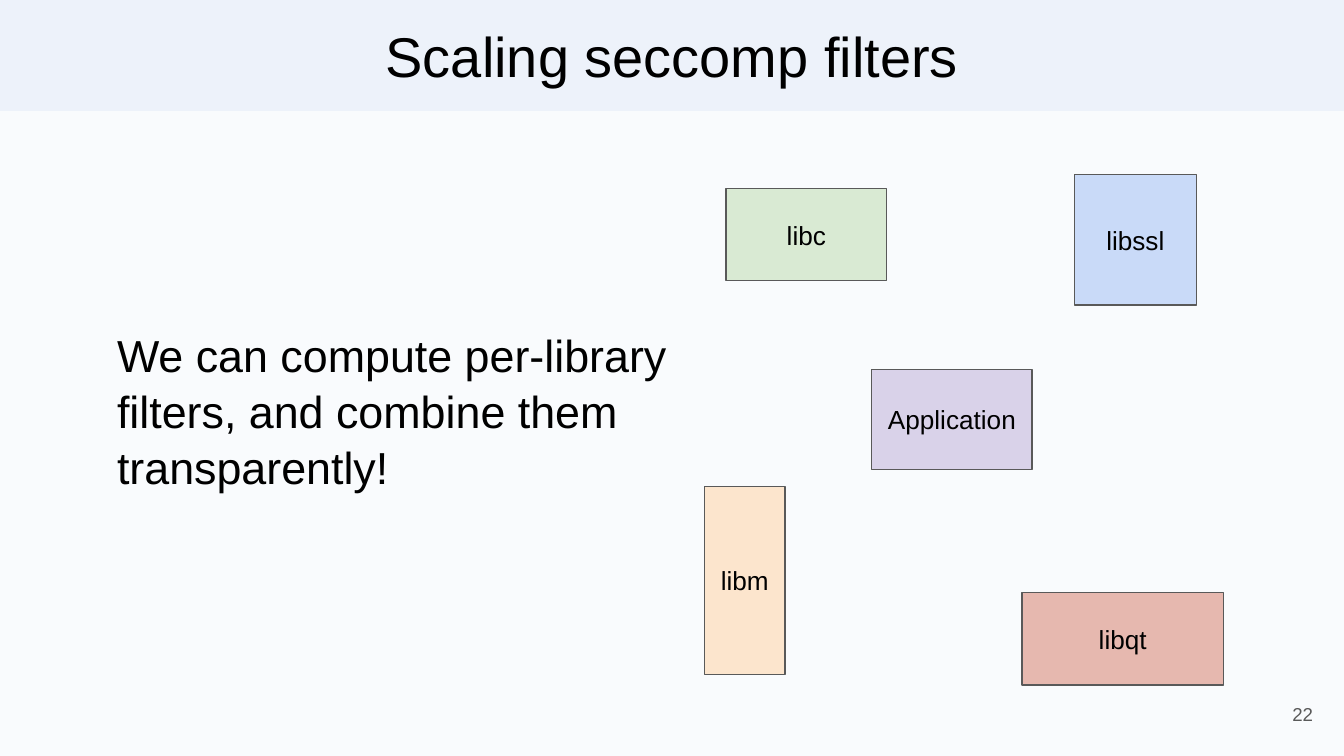
from pptx import Presentation
from pptx.dml.color import RGBColor
from pptx.enum.shapes import MSO_SHAPE as Shape
from pptx.enum.text import MSO_ANCHOR as Anchor, MSO_AUTO_SIZE as AutoSize, PP_ALIGN as Align
from pptx.oxml.ns import qn
from pptx.util import Pt

BACKGROUND = RGBColor(0xF9, 0xFB, 0xFD)
BANNER = RGBColor(0xED, 0xF2, 0xFA)
BLACK = RGBColor(0, 0, 0)
GRAY = RGBColor(0x59, 0x59, 0x59)
PURPLE = RGBColor(0xD9, 0xD2, 0xE9)
GREEN = RGBColor(0xD9, 0xEA, 0xD3)
BLUE = RGBColor(0xC9, 0xDA, 0xF8)
ORANGE = RGBColor(0xFC, 0xE5, 0xCD)
RED = RGBColor(0xE6, 0xB8, 0xAF)

SLIDE_WIDTH, SLIDE_HEIGHT = 720, 405
BANNER_AREA = (0, 0, SLIDE_WIDTH, 59)
INSET = 7.2

# name, fill, (left, top, width, height)
COMPONENTS = [
    ("Application", PURPLE, (467, 198, 86, 53.5)),
    ("libc", GREEN, (389, 101, 86, 49.5)),
    ("libssl", BLUE, (575.5, 93.5, 65.5, 70)),
    ("libm", ORANGE, (377.5, 260.5, 43, 101)),
    ("libqt", RED, (547.5, 317.5, 108, 49.5)),
]


def write_text(box, text, size, color=BLACK, align=Align.CENTER, line_spacing=1.0):
    frame = box.text_frame
    frame.word_wrap = True
    frame.auto_size = AutoSize.NONE
    frame.vertical_anchor = Anchor.MIDDLE
    frame.margin_left = frame.margin_right = Pt(INSET)
    frame.margin_top = frame.margin_bottom = Pt(INSET)
    para = frame.paragraphs[0]
    para.alignment = align
    para.line_spacing = line_spacing
    para.space_before = Pt(0)
    span = para.add_run()
    span.text = text
    span.font.name = "Arial"
    span.font.size = Pt(size)
    span.font.color.rgb = color


def place(box, area):
    box.left, box.top, box.width, box.height = map(Pt, area)


def remove_bullet(para):
    properties = para._p.get_or_add_pPr()
    properties.set("marL", "0")
    properties.set("indent", "0")
    properties.append(properties.makeelement(qn("a:buNone"), {}))


def add_rectangle(page, area, fill, line):
    box = page.shapes.add_shape(Shape.RECTANGLE, *map(Pt, area))
    box.shadow.inherit = False
    box.fill.solid()
    box.fill.fore_color.rgb = fill
    box.line.color.rgb = line
    box.line.width = Pt(0.75)
    return box


def add_banner(page):
    """Draw the title band behind the placeholders."""
    banner = add_rectangle(page, BANNER_AREA, BANNER, BANNER)
    page.shapes._spTree.insert(2, banner._element)


def add_title(page, text):
    title = page.shapes.title
    place(title, BANNER_AREA)
    write_text(title, text, size=30)


def add_message(page, text):
    body = page.placeholders[1]
    place(body, (55.5, 144, 356.5, 151))
    write_text(body, text, size=24, align=Align.LEFT, line_spacing=1.04)
    remove_bullet(body.text_frame.paragraphs[0])


def add_page_number(page, number):
    box = page.shapes.add_textbox(*map(Pt, (667.5, 367, 43, 31)))
    write_text(box, str(number), size=10, color=GRAY, align=Align.RIGHT)


def main():
    deck = Presentation()
    deck.slide_width, deck.slide_height = Pt(SLIDE_WIDTH), Pt(SLIDE_HEIGHT)
    page = deck.slides.add_slide(deck.slide_layouts[1])
    page.background.fill.solid()
    page.background.fill.fore_color.rgb = BACKGROUND

    add_banner(page)
    add_title(page, "Scaling seccomp filters")
    add_page_number(page, 22)
    add_message(page, "We can compute per-library filters, and combine them transparently!")
    for name, fill, area in COMPONENTS:
        write_text(add_rectangle(page, area, fill, GRAY), name, size=14)

    deck.save("out.pptx")


if __name__ == "__main__":
    main()
